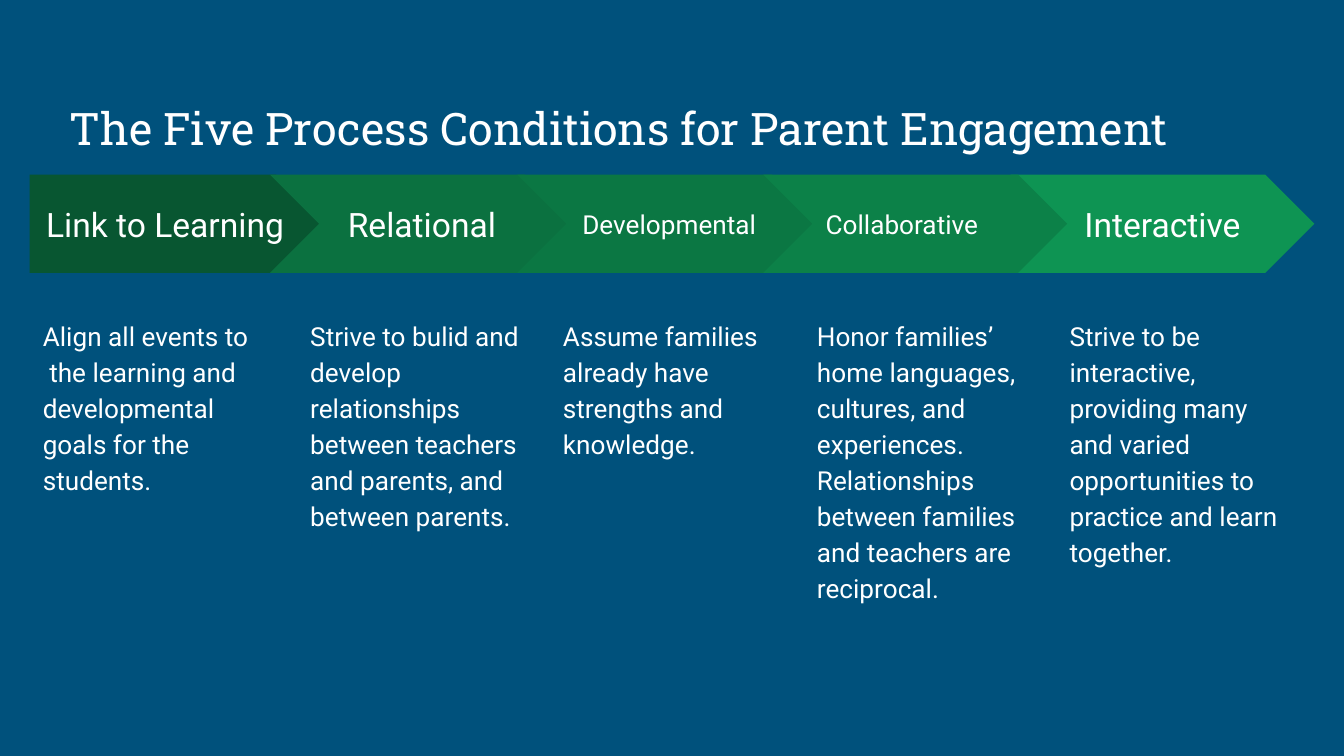
"""Build a slide showing the five process conditions for parent engagement."""
from pptx import Presentation
from pptx.dml.color import RGBColor
from pptx.enum.shapes import MSO_SHAPE
from pptx.enum.text import MSO_ANCHOR, MSO_AUTO_SIZE, PP_ALIGN
from pptx.util import Inches, Pt

THEME = {
    "background": "00517C",
    "text": "FFFFFF",
    "greens": ["085631", "0B7140", "0B7743", "0C8148", "0E9453"],
    "heading_font": "Roboto Slab",
    "body_font": "Roboto",
    "title": Pt(24),
    "large": Pt(18),
    "regular": Pt(14),
}
FRAME = {
    "word_wrap": True,
    "auto_size": MSO_AUTO_SIZE.NONE,
    "margin_left": Inches(0.1),
    "margin_right": Inches(0.1),
    "margin_top": Inches(0.1),
    "margin_bottom": Inches(0.1),
}
CONDITIONS = [
    (0, "Link to Learning", "large", PP_ALIGN.CENTER,
     "Align all events to\v the learning and developmental goals for the students."),
    (1, "Relational", "large", PP_ALIGN.CENTER,
     "Strive to bulid and develop relationships between teachers and parents, "
     "and between parents."),
    (2, "Developmental", "regular", PP_ALIGN.CENTER,
     "Assume families already have strengths and knowledge."),
    (4, "Interactive", "large", PP_ALIGN.CENTER,
     "Strive to be interactive, providing many and varied opportunities to "
     "practice and learn together."),
    (3, "Collaborative", "regular", PP_ALIGN.LEFT,
     "Honor families’ home languages, cultures, and experiences. Relationships "
     "between families and teachers are reciprocal."),
]


def apply(target, values):
    for name, value in values.items():
        setattr(target, name, value)


def write(shape, words, size, font, anchor, align, spacing=1.0):
    frame = shape.text_frame
    frame.text = words
    apply(frame, {**FRAME, "vertical_anchor": anchor})
    paragraph = frame.paragraphs[0]
    apply(paragraph, {"alignment": align, "line_spacing": spacing})
    for run in paragraph.runs:
        apply(run.font, {"name": THEME[font], "size": THEME[size]})
        run.font.color.rgb = RGBColor.from_string(THEME["text"])


deck = Presentation()
apply(deck, {"slide_width": Inches(10), "slide_height": Inches(10) * 9 // 16})
slide = deck.slides.add_slide(deck.slide_layouts[5])
slide.background.fill.solid()
slide.background.fill.fore_color.rgb = RGBColor.from_string(THEME["background"])

heading = slide.shapes.title
apply(heading, {"left": Inches(0.42), "top": Inches(0.5),
                "width": Inches(9.15), "height": Inches(0.75)})
write(heading, "The Five Process Conditions for Parent Engagement",
      "title", "heading_font", MSO_ANCHOR.BOTTOM, PP_ALIGN.LEFT)

for step, name, size, align, explanation in CONDITIONS:
    if step == 0:
        outline, arrow_left, arrow_width, text_left = MSO_SHAPE.PENTAGON, 0.22, 2.2, 0.22
    else:
        outline, arrow_width = MSO_SHAPE.CHEVRON, 2.26
        arrow_left = round(2.01 + 1.836 * (step - 1), 2)
        text_left = round(2.21 + 1.883 * (step - 1), 2)

    arrow = slide.shapes.add_shape(outline, Inches(arrow_left), Inches(1.3),
                                   Inches(arrow_width), Inches(0.73))
    arrow.shadow.inherit = False
    arrow.fill.solid()
    arrow.fill.fore_color.rgb = RGBColor.from_string(THEME["greens"][step])
    arrow.line.fill.background()
    write(arrow, name, size, "body_font", MSO_ANCHOR.MIDDLE, align)

    description = slide.shapes.add_textbox(Inches(text_left), Inches(2.25),
                                           Inches(1.78), Inches(2.57))
    write(description, explanation, "regular", "body_font",
          MSO_ANCHOR.TOP, PP_ALIGN.LEFT, 1.15)

deck.save("out.pptx")
